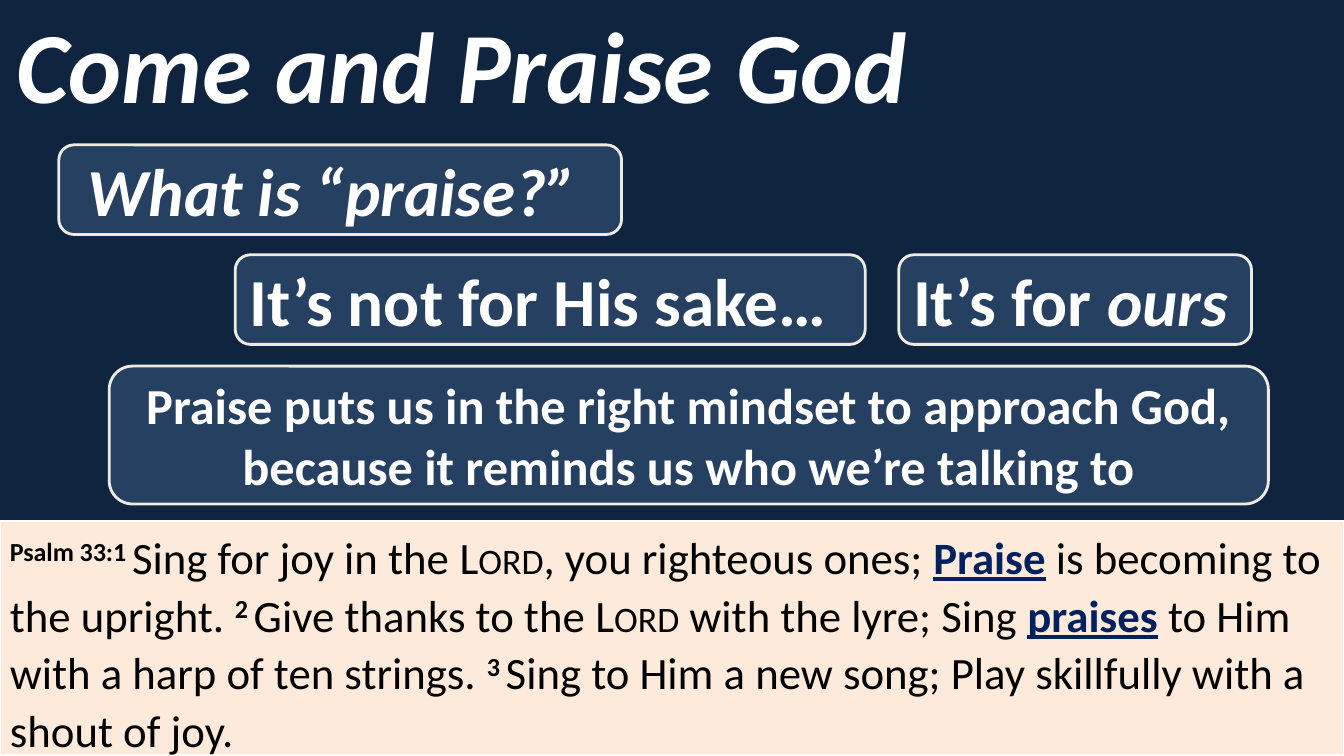
"""Build the praise slide: title, four callouts and a psalm passage."""
from pptx import Presentation
from pptx.dml.color import RGBColor
from pptx.enum.shapes import MSO_SHAPE
from pptx.enum.text import MSO_ANCHOR, MSO_UNDERLINE, PP_ALIGN
from pptx.util import Pt

RECTANGLE = MSO_SHAPE.RECTANGLE
CALLOUT = MSO_SHAPE.ROUNDED_RECTANGULAR_CALLOUT
TOP, MIDDLE = MSO_ANCHOR.TOP, MSO_ANCHOR.MIDDLE
LEFT, CENTER = PP_ALIGN.LEFT, PP_ALIGN.CENTER
SINGLE = MSO_UNDERLINE.SINGLE_LINE

THEME = {
    "font": "Calibri",
    "page": "0F243E", "callout": "254061", "callout_line": "EEECE1",
    "passage": "FDEADA", "light": "FFFFFF", "dark": "000000", "praise": "002060",
    "title_size": 72, "heading_size": 48, "point_size": 36, "passage_size": 32,
    "callout_width": 2, "passage_width": 1.5,
}
STYLES = {
    "plain": {},
    "bold": {"bold": True},
    "slanted": {"bold": True, "italic": True},
    "praise": {"bold": True, "underline": SINGLE, "color": "praise"},
    "verse": {"bold": True, "attributes": {"baseline": "30000"}},
    "small": {"attributes": {"cap": "small"}},
}

PAGE_SIZE = (960, 540)
TITLE = [("Come and Praise God", "slanted")]
TITLE_FRAME = (0, 0, 660, 90)
HEADING_HEIGHT = 64
CALLOUT_SHAPE = (-0.22, 0.5, 0.17)
CALLOUTS = [
    ((42, 103.5, 402, HEADING_HEIGHT), CENTER, "heading_size",
     [("What is “praise?” ", "slanted")]),
    ((168, 182, 450, HEADING_HEIGHT), LEFT, "heading_size",
     [("It’s not for His sake…", "bold")]),
    ((642, 182, 252, HEADING_HEIGHT), LEFT, "heading_size",
     [("It’s for ", "bold"), ("ours", "slanted")]),
    ((78, 261.5, 828, 98.5), CENTER, "point_size",
     [("Praise puts us in the right mindset to approach God, "
       "because it reminds us who we’re talking to", "bold")]),
]
PASSAGE_FRAME = (0, 372.4, 960, 167)
PASSAGE_SPACING = 1.07
PASSAGE = [
    ("Psalm 33:1 ", "verse"),
    ("Sing for joy in the ", "plain"), ("Lord", "small"),
    (", you righteous ones; ", "plain"), ("Praise", "praise"),
    (" is becoming to the upright. ", "plain"),
    ("2 ", "verse"),
    ("Give thanks to the ", "plain"), ("Lord", "small"),
    (" with the lyre; Sing ", "plain"), ("praises", "praise"),
    (" to Him with a harp of ten strings. ", "plain"),
    ("3 ", "verse"),
    ("Sing to Him a new song; Play skillfully with a shout of joy.", "plain"),
]


def color(name):
    """Return a theme colour."""
    return RGBColor.from_string(THEME[name])


def write(box, spans, size, ink, align, anchor):
    """Fill a box with one paragraph of styled spans."""
    frame = box.text_frame
    frame.word_wrap = True
    frame.vertical_anchor = anchor
    para = frame.paragraphs[0]
    para.alignment = align
    for text, style in spans:
        span = para.add_run()
        span.text = text
        look = STYLES[style]
        formats = {
            "name": THEME["font"], "size": Pt(THEME[size]),
            "bold": look.get("bold", False), "italic": look.get("italic", False),
            "underline": look.get("underline", False),
        }
        for key, value in formats.items():
            setattr(span.font, key, value)
        span.font.color.rgb = color(look.get("color", ink))
        for key, value in look.get("attributes", {}).items():
            span.font._element.set(key, value)
    return para


def add_box(page, kind, frame, fill, line, width):
    """Add a filled, outlined shape."""
    box = page.shapes.add_shape(kind, *map(Pt, frame))
    box.shadow.inherit = False
    box.fill.solid()
    box.fill.fore_color.rgb = color(fill)
    box.line.color.rgb = color(line)
    box.line.width = Pt(THEME[width])
    return box


def main():
    """Build and save the deck."""
    deck = Presentation()
    deck.slide_width, deck.slide_height = map(Pt, PAGE_SIZE)
    page = deck.slides.add_slide(deck.slide_layouts[6])
    page.background.fill.solid()
    page.background.fill.fore_color.rgb = color("page")

    passage = add_box(page, RECTANGLE, PASSAGE_FRAME, "passage", "light", "passage_width")
    para = write(passage, PASSAGE, "passage_size", "dark", LEFT, TOP)
    para.line_spacing = PASSAGE_SPACING

    title = page.shapes.add_textbox(*map(Pt, TITLE_FRAME))
    write(title, TITLE, "title_size", "light", CENTER, MIDDLE)

    for frame, align, size, spans in CALLOUTS:
        callout = add_box(page, CALLOUT, frame, "callout", "callout_line", "callout_width")
        for index, value in enumerate(CALLOUT_SHAPE):
            callout.adjustments[index] = value
        write(callout, spans, size, "light", align, MIDDLE)

    deck.save("out.pptx")


if __name__ == "__main__":
    main()
